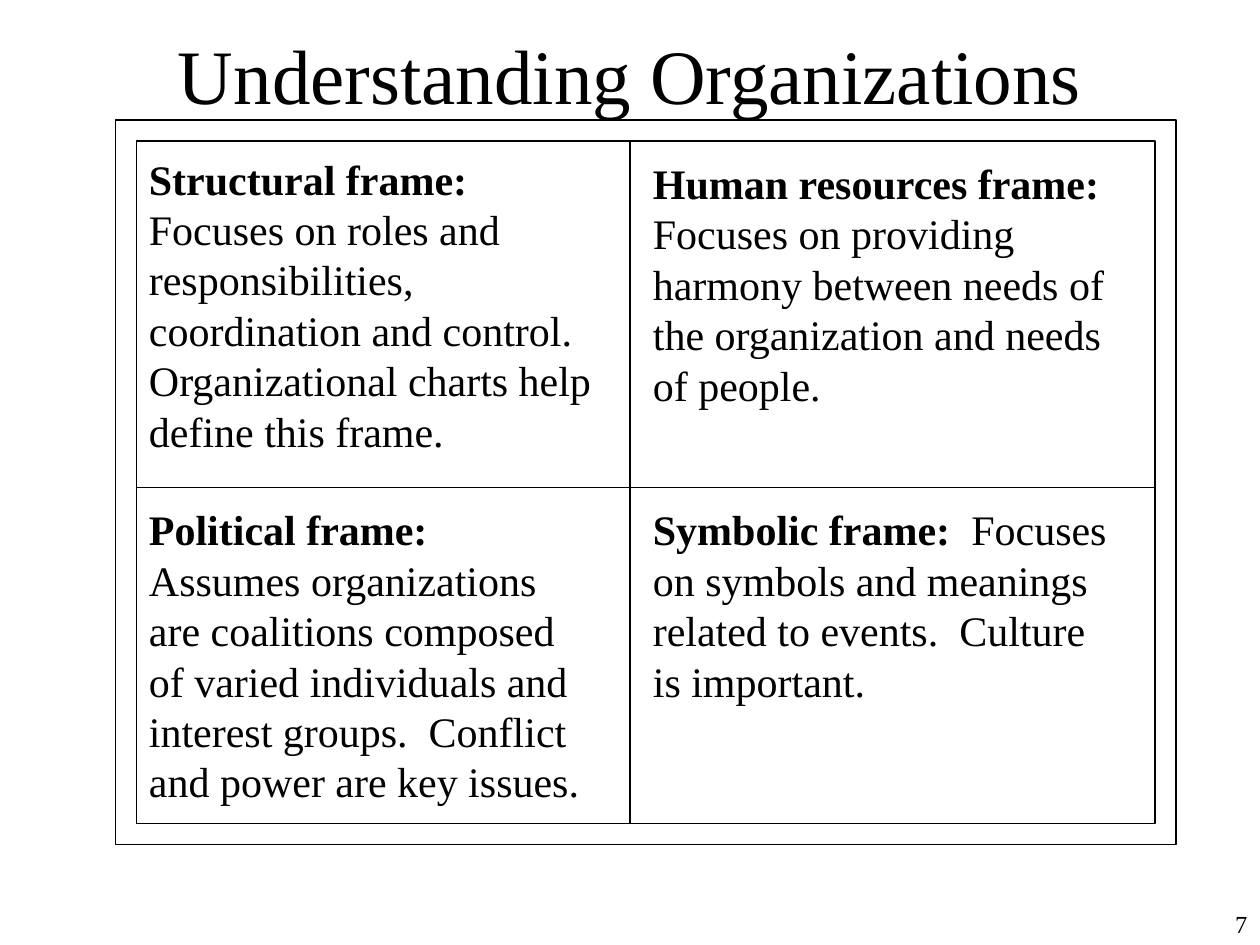
from lxml.etree import SubElement
from pptx import Presentation
from pptx.dml.color import RGBColor
from pptx.enum.shapes import MSO_CONNECTOR, MSO_SHAPE
from pptx.enum.text import MSO_ANCHOR, MSO_AUTO_SIZE, PP_ALIGN
from pptx.oxml.ns import qn
from pptx.util import Pt

TITLE = "Understanding Organizations"
PAGE = "7"
FONT, BLACK = "Times New Roman", "000000"
FRAMES = [
    ("Structural frame:", "  Focuses on roles and responsibilities, coordination and control. "
     "Organizational charts help define this frame.", (78, 84, 276, 180)),
    ("Human resources frame:", "  Focuses on providing harmony between needs of the organization "
     "and needs of people.", (366, 86.4, 282, 151)),
    ("Political frame:", "  Assumes organizations are coalitions composed of varied individuals "
     "and interest groups.  Conflict and power are key issues.", (78, 284.4, 270, 180)),
    ("Symbolic frame:", "  Focuses on symbols and meanings related to events.  "
     "Culture is important.", (366, 284.4, 282, 122)),
]
LEFT, TOP, WIDTH, HEIGHT = GRID = (78, 80.6, 582, 390)
MARGIN = 12
COLUMN_X, ROW_Y = 360, 278.6


def color(value):
    return RGBColor.from_string(value)


def set_line(line):
    line.color.rgb = color(BLACK)
    line.width = Pt(0.75)


def add_run(p, text, size, bold=False):
    r = p.add_run()
    r.text = text
    for name, value in {"name": FONT, "size": Pt(size), "bold": bold}.items():
        setattr(r.font, name, value)
    r.font.color.rgb = color(BLACK)


def add_text(s, box, runs, size, align=PP_ALIGN.LEFT, grow=False):
    sp = s.shapes.add_textbox(*map(Pt, box))
    tf = sp.text_frame
    tf.word_wrap = True
    tf.auto_size = MSO_AUTO_SIZE.SHAPE_TO_FIT_TEXT if grow else MSO_AUTO_SIZE.NONE
    p = tf.paragraphs[0]
    p.alignment = align
    for text, bold in runs:
        add_run(p, text, size, bold)


def add_border(s, box):
    sp = s.shapes.add_shape(MSO_SHAPE.RECTANGLE, *map(Pt, box))
    sp.shadow.inherit = False
    sp.fill.background()
    set_line(sp.line)
    return sp


def add_divider(s, border, ends, sites):
    sp = s.shapes.add_connector(MSO_CONNECTOR.STRAIGHT, *map(Pt, ends))
    set_line(sp.line)
    SubElement(sp._element.spPr, qn("a:effectLst"))


def add_title(s):
    sp = s.shapes.title
    box = {"left": 0, "top": 0, "width": 720, "height": 84}
    for name, value in box.items():
        setattr(sp, name, Pt(value))
    tf = sp.text_frame
    tf.vertical_anchor = MSO_ANCHOR.MIDDLE
    tf.auto_size = MSO_AUTO_SIZE.NONE
    p = tf.paragraphs[0]
    p.alignment = PP_ALIGN.CENTER
    add_run(p, TITLE, 44)


def main():
    prs = Presentation()
    prs.slide_width, prs.slide_height = Pt(720), Pt(540)
    s = prs.slides.add_slide(prs.slide_layouts[5])
    add_text(s, (642, 516, 78, 24), [(PAGE, False)], 14, PP_ALIGN.RIGHT)
    add_title(s)
    border = add_border(s, GRID)
    add_divider(s, border, (COLUMN_X, TOP, COLUMN_X, TOP + HEIGHT), None)
    add_divider(s, border, (LEFT, ROW_Y, LEFT + WIDTH, ROW_Y), None)
    for heading, body, box in FRAMES:
        add_text(s, box, [(heading, True), (body, False)], 24, grow=True)
    add_border(s, (LEFT - MARGIN, TOP - MARGIN, WIDTH + 2 * MARGIN, HEIGHT + 2 * MARGIN))
    prs.save("out.pptx")


if __name__ == "__main__":
    main()
